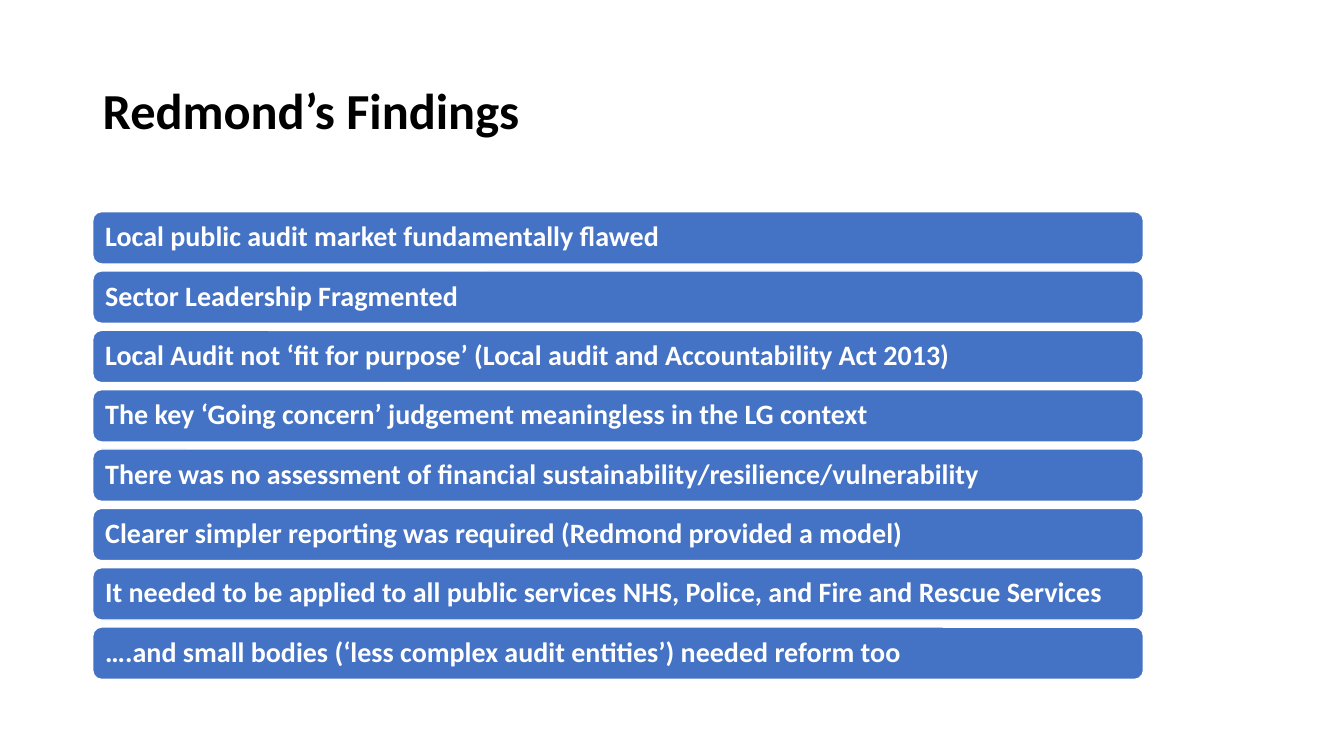
import pptx
import pptx.util
import pptx.dml.color
import pptx.enum.shapes
import pptx.enum.text

Inches = pptx.util.Inches
Pt = pptx.util.Pt
RGBColor = pptx.dml.color.RGBColor

HEADING = "Redmond’s Findings"
FINDINGS = [
    "Local public audit market fundamentally flawed",
    "Sector Leadership Fragmented",
    "Local Audit not ‘fit for purpose’ (Local audit and Accountability Act 2013)",
    "The key ‘Going concern’ judgement meaningless in the LG context",
    "There was no assessment of financial sustainability/resilience/vulnerability",
    "Clearer simpler reporting was required (Redmond provided a model)",
    "It needed to be applied to all public services NHS, Police, and Fire and Rescue Services",
    "….and small bodies (‘less complex audit entities’) needed reform too",
]

BLACK = RGBColor(0x00, 0x00, 0x00)
WHITE = RGBColor(0xFF, 0xFF, 0xFF)
BLUE = RGBColor(0x44, 0x72, 0xC4)

SLIDE_WIDTH, SLIDE_HEIGHT = 13.33, 7.5
LEFT = 0.92
HEADING_TOP, HEADING_WIDTH, HEADING_HEIGHT = 0.4, 11.5, 1.45
BARS_TOP, BARS_BOTTOM, BAR_WIDTH, BAR_GAP = 2.1, 6.74, 10.42, 0.07

FRAME_FORMAT = {
    "word_wrap": True,
    "vertical_anchor": pptx.enum.text.MSO_ANCHOR.MIDDLE,
    "margin_left": Inches(0.1),
    "margin_right": Inches(0.1),
    "margin_top": Inches(0.05),
    "margin_bottom": Inches(0.05),
}
PARAGRAPH_FORMAT = {
    "alignment": pptx.enum.text.PP_ALIGN.LEFT,
    "line_spacing": 0.9,
}
FONT_FORMAT = {"name": "Calibri", "bold": True}


def apply_format(target, values):
    for attribute, value in values.items():
        setattr(target, attribute, value)


def write_text(shape, text, size, color):
    frame = shape.text_frame
    apply_format(frame, FRAME_FORMAT)
    paragraph = frame.paragraphs[0]
    apply_format(paragraph, PARAGRAPH_FORMAT)
    run = paragraph.add_run()
    run.text = text
    apply_format(run.font, {**FONT_FORMAT, "size": Pt(size)})
    run.font.color.rgb = color


def add_heading(slide):
    heading = slide.shapes.add_textbox(
        Inches(LEFT), Inches(HEADING_TOP), Inches(HEADING_WIDTH), Inches(HEADING_HEIGHT)
    )
    write_text(heading, HEADING, 36, BLACK)


def add_findings(slide):
    pitch = (BARS_BOTTOM - BARS_TOP + BAR_GAP) / len(FINDINGS)
    for row, finding in enumerate(FINDINGS):
        bar = slide.shapes.add_shape(
            pptx.enum.shapes.MSO_SHAPE.ROUNDED_RECTANGLE,
            Inches(LEFT),
            Inches(BARS_TOP + row * pitch),
            Inches(BAR_WIDTH),
            Inches(pitch - BAR_GAP),
        )
        bar.shadow.inherit = False
        bar.fill.solid()
        bar.fill.fore_color.rgb = BLUE
        bar.line.color.rgb = WHITE
        bar.line.width = Pt(1)
        write_text(bar, finding, 20, WHITE)


def main():
    deck = pptx.Presentation()
    deck.slide_width = Inches(SLIDE_WIDTH)
    deck.slide_height = Inches(SLIDE_HEIGHT)
    slide = deck.slides.add_slide(deck.slide_layouts[6])
    add_heading(slide)
    add_findings(slide)
    deck.save("out.pptx")


if __name__ == "__main__":
    main()
